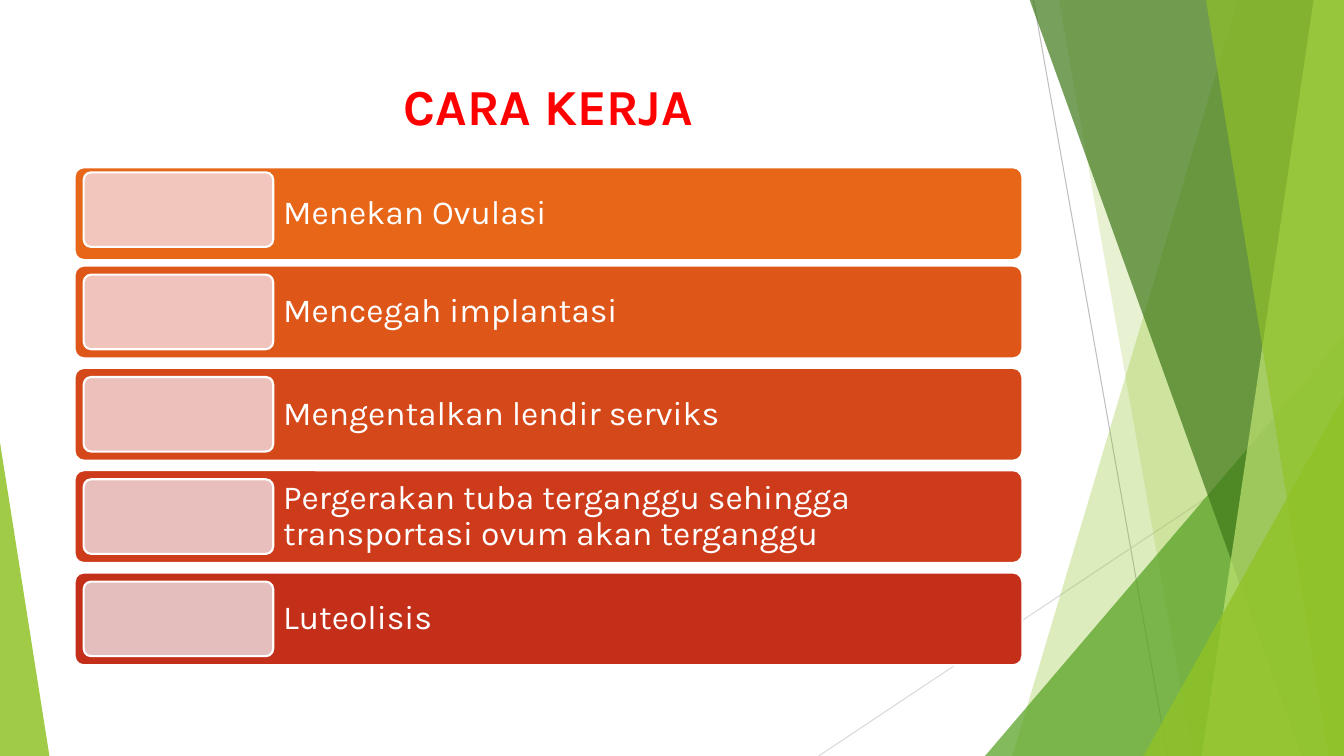
from lxml import etree
from pptx import Presentation
from pptx.dml.color import RGBColor
from pptx.enum.shapes import MSO_CONNECTOR, MSO_SHAPE
from pptx.enum.text import MSO_ANCHOR, PP_ALIGN
from pptx.oxml.ns import qn
from pptx.util import Inches, Pt

STRAIGHT = MSO_CONNECTOR.STRAIGHT
TRIANGLE = MSO_SHAPE.ISOSCELES_TRIANGLE
ROUNDED = MSO_SHAPE.ROUNDED_RECTANGLE
MIDDLE = MSO_ANCHOR.MIDDLE
LEFT, CENTER = PP_ALIGN.LEFT, PP_ALIGN.CENTER

FONT = "Karla"
WIDTH, HEIGHT = 13.33, 7.5
COLORS = {
    "white": "FFFFFF",
    "title": "FF0000",
    "lime": "90C226",
    "pale lime": "C0E474",
    "green": "54A021",
    "dark green": "3F7819",
    "gray": "BFBFBF",
    "light gray": "D9D9D9",
}
METHODS = [
    ("Menekan Ovulasi", "E76618", "F3C6BD"),
    ("Mencegah implantasi", "DE5719", "F0C4BD"),
    ("Mengentalkan lendir serviks", "D54819", "ECC1BC"),
    ("Pergerakan tuba terganggu sehingga transportasi ovum akan terganggu",
     "CD3B1A", "E8BFBD"),
    ("Luteolisis", "C42F1A", "E4BEBD"),
]
FIRST_BAR_TOP = 1.66
FIRST_TILE_TOP = 1.71
ROW_PITCH = 1.015
TILE_INSET = 0.09


def rgb(color):
    return RGBColor.from_string(COLORS.get(color, color))


def paint(shape, color, opacity=100, outline=None):
    shape.shadow.inherit = False
    shape.fill.solid()
    shape.fill.fore_color.rgb = rgb(color)
    if opacity < 100:
        color_element = shape.fill._xPr.find(qn("a:solidFill"))[0]
        alpha = etree.SubElement(color_element, qn("a:alpha"))
        alpha.set("val", str(opacity * 1000))
    if outline:
        shape.line.color.rgb = rgb(outline)
        shape.line.width = Pt(1.5)
    else:
        shape.line.fill.background()


def add_line(slide, start, end, color):
    line = slide.shapes.add_connector(
        STRAIGHT, *(Inches(value) for value in start + end))
    line.line.color.rgb = rgb(color)
    line.line.width = Pt(0.75)
    etree.SubElement(line._element.spPr, qn("a:effectLst"))


def add_band(slide, top_left, bottom_left, color, opacity):
    points = [(top_left, -0.01), (WIDTH, -0.01), (WIDTH, HEIGHT), (bottom_left, HEIGHT)]
    corners = [(Inches(x), Inches(y)) for x, y in points]
    builder = slide.shapes.build_freeform(*corners[0])
    builder.add_line_segments(corners[1:], close=True)
    paint(builder.convert_to_shape(), color, opacity)


def add_preset(slide, kind, box, adjustment, color, **style):
    shape = slide.shapes.add_shape(kind, *(Inches(value) for value in box))
    shape.adjustments[0] = adjustment
    paint(shape, color, **style)


def add_text(slide, text, box, size, color, bold=False, align=LEFT,
             inset=0.1, line_spacing=1.0):
    text_box = slide.shapes.add_textbox(*(Inches(value) for value in box))
    frame = text_box.text_frame
    frame.word_wrap = True
    frame.vertical_anchor = MIDDLE
    frame.margin_left = frame.margin_right = Inches(0.1)
    frame.margin_top = frame.margin_bottom = Inches(inset)
    paragraph = frame.paragraphs[0]
    paragraph.alignment = align
    paragraph.line_spacing = line_spacing
    run = paragraph.add_run()
    run.text = text
    run.font.name = FONT
    run.font.size = Pt(size)
    run.font.bold = bold
    run.font.color.rgb = rgb(color)


def add_backdrop(slide):
    add_line(slide, (10.25, 0), (11.58, HEIGHT), "gray")
    add_line(slide, (WIDTH, 4.03), (8.12, HEIGHT), "light gray")
    add_band(slide, 12.28, 10.04, "lime", 30)
    add_band(slide, 10.5, 11.83, "lime", 20)
    add_preset(slide, TRIANGLE, (9.77, 3.33, 3.56, 4.17), 1, "green", opacity=72)
    add_band(slide, 10.21, 12.91, "dark green", 70)
    add_band(slide, 13.03, 11.92, "pale lime", 70)
    add_band(slide, 11.96, 13.18, "lime", 65)
    add_preset(slide, TRIANGLE, (11.34, 3.93, 1.99, 3.57), 1, "lime", opacity=80)
    add_preset(slide, TRIANGLE, (0, 4.39, 0.49, 3.11), 0, "lime", opacity=85)


def add_method(slide, index, text, bar_color, tile_color):
    tile_top = FIRST_TILE_TOP + index * ROW_PITCH
    bar_top = max(FIRST_BAR_TOP, tile_top - TILE_INSET)
    add_preset(slide, ROUNDED, (0.74, bar_top, 9.4, 0.92), 0.1, bar_color,
               outline="white")
    add_text(slide, text, (2.71, bar_top, 7.43, 0.92), 24, "white",
             line_spacing=0.9)
    add_preset(slide, ROUNDED, (0.83, tile_top, 1.88, 0.74), 0.1, tile_color,
               outline="white")


def main():
    presentation = Presentation()
    presentation.slide_width = Inches(WIDTH)
    presentation.slide_height = Inches(HEIGHT)
    slide = presentation.slides.add_slide(presentation.slide_layouts[6])
    add_backdrop(slide)
    add_text(slide, "CARA KERJA", (0.74, 0.67, 9.4, 0.75), 36, "title",
             bold=True, align=CENTER, inset=0.05)
    for index, method in enumerate(METHODS):
        add_method(slide, index, *method)
    presentation.save("out.pptx")


if __name__ == "__main__":
    main()
